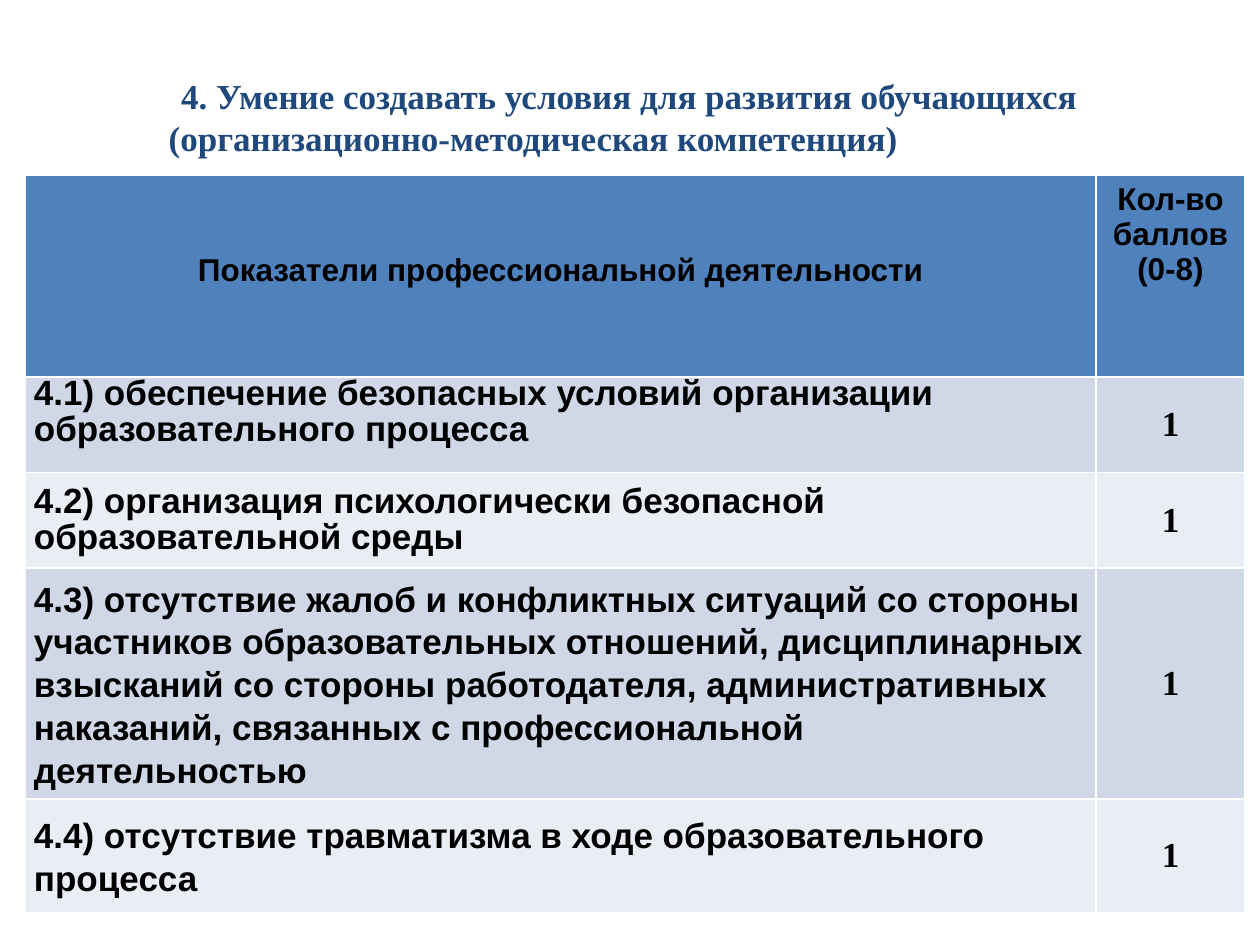
from pptx import Presentation
from pptx.dml.color import RGBColor
from pptx.enum import text as t
from pptx.util import Inches, Pt

NAVY = RGBColor(0x1F, 0x49, 0x7D)
BLACK = RGBColor(0, 0, 0)
BLUE = RGBColor(0x4F, 0x81, 0xBD)
BANDS = RGBColor(0xD0, 0xD8, 0xE8), RGBColor(0xE9, 0xED, 0xF4)

TOP, MID = t.MSO_ANCHOR.TOP, t.MSO_ANCHOR.MIDDLE
LEFT, MIDDLE = t.PP_ALIGN.LEFT, t.PP_ALIGN.CENTER
SERIF = "Times New Roman"

TITLE = ("4. Умение создавать условия для развития обучающихся "
         "(организационно-методическая компетенция)")
HEADS = "Показатели профессиональной деятельности", "Кол-во баллов (0-8)"
ROWS = [
    ("4.1) обеспечение безопасных условий организации образовательного процесса",
     "1", 0.76, 0.92, TOP),
    ("4.2) организация психологически безопасной образовательной среды",
     "1", 0.76, 0.92, MID),
    ("4.3) отсутствие жалоб и конфликтных ситуаций со стороны участников "
     "образовательных отношений, дисциплинарных взысканий со стороны "
     "работодателя, административных наказаний, связанных с "
     "профессиональной деятельностью", "1", 1.81, 1.1, MID),
    ("4.4) отсутствие травматизма в ходе образовательного процесса",
     "1", 0.9, 1.1, MID),
]


def write(frame, words, size=20, font="Arial", color=BLACK, align=LEFT, space=None):
    """Put one bold paragraph into a text frame and return it."""
    frame.word_wrap = True
    para = frame.paragraphs[0]
    para.alignment = align
    para.line_spacing = space
    run = para.add_run()
    run.text = words
    run.font.size = Pt(size)
    run.font.name = font
    run.font.bold = True
    run.font.color.rgb = color
    return para


def fill(cell, words, back, anchor=MID, top=0, side=0.07, **style):
    """Colour a table cell, set its margins and write its text."""
    cell.fill.solid()
    cell.fill.fore_color.rgb = back
    cell.vertical_anchor = anchor
    cell.margin_left = cell.margin_right = Inches(side)
    cell.margin_top = Inches(top)
    cell.margin_bottom = 0
    write(cell.text_frame, words, **style)


def title(slide):
    """Add the heading with its first line indented."""
    box = slide.shapes.add_textbox(Inches(0.5), Inches(0.3), Inches(9), Inches(1.25))
    box.text_frame.vertical_anchor = MID
    para = write(box.text_frame, TITLE, font=SERIF, color=NAVY)
    props = para._p.get_or_add_pPr()
    props.set("marL", str(Inches(0.74)))
    props.set("indent", str(Inches(0.1)))


def table(slide):
    """Add the table of indicators and points."""
    grid = slide.shapes.add_table(len(ROWS) + 1, 2, Inches(0.2), Inches(1.39),
                                  Inches(9.68), Inches(5.83)).table
    for col, width in zip(grid.columns, (8.5, 1.18)):
        col.width = Inches(width)
    grid.rows[0].height = Inches(1.6)
    for col, (words, top) in enumerate(zip(HEADS, (0.62, 0.05))):
        fill(grid.cell(0, col), words, BLUE, anchor=TOP, top=top, side=0.1,
             size=18, align=MIDDLE)
    for row, (words, points, height, space, anchor) in enumerate(ROWS, 1):
        back = BANDS[(row - 1) % 2]
        grid.rows[row].height = Inches(height)
        fill(grid.cell(row, 0), words, back, anchor=anchor, space=space)
        fill(grid.cell(row, 1), points, back, font=SERIF, align=MIDDLE)


def main():
    """Build and save the slide."""
    deck = Presentation()
    deck.slide_width, deck.slide_height = Inches(10), Inches(7.5)
    slide = deck.slides.add_slide(deck.slide_layouts[6])
    title(slide)
    table(slide)
    deck.save("out.pptx")


if __name__ == "__main__":
    main()
